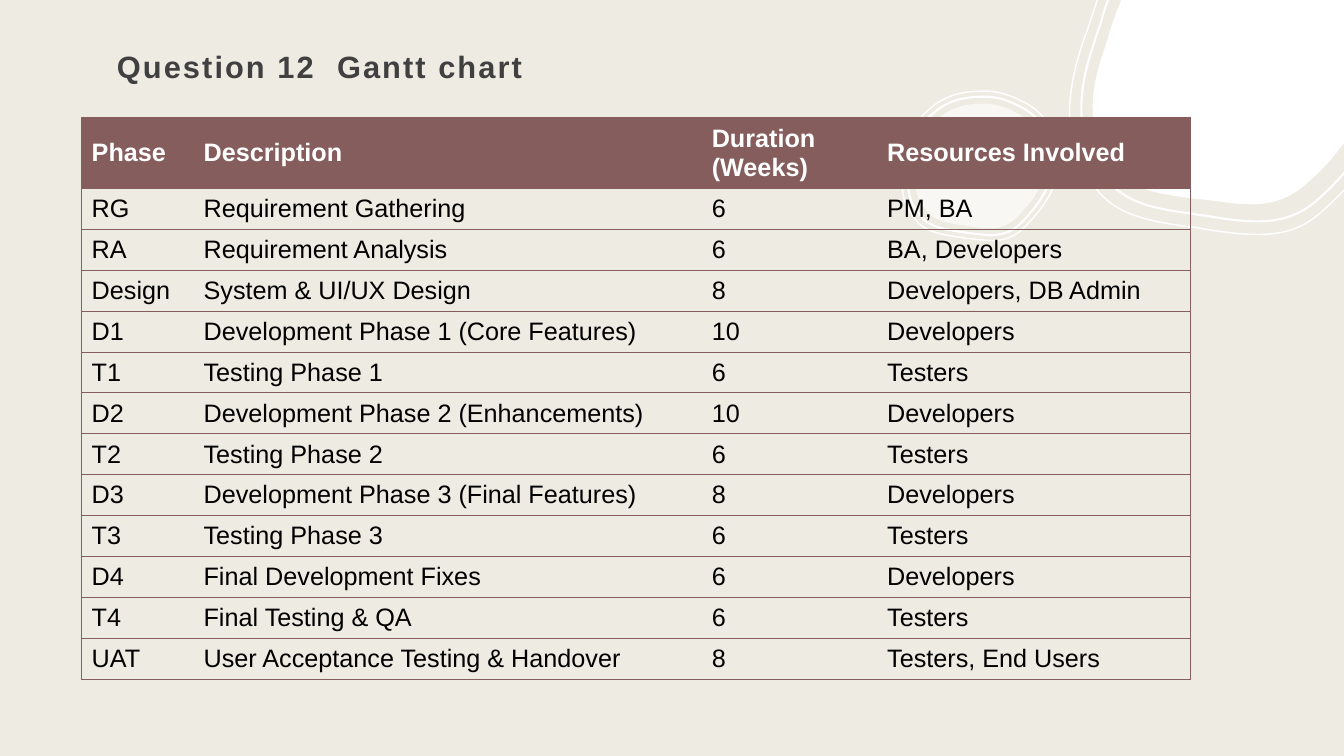
from dataclasses import dataclass
from lxml.etree import SubElement
from pptx import Presentation
from pptx.dml.color import RGBColor as RGB
from pptx.enum.text import MSO_ANCHOR as Anchor
from pptx.oxml.ns import qn
from pptx.util import Inches, Pt

# Content
TITLE = "Question 12  Gantt chart"
HEADINGS = ("Phase", "Description", "Duration (Weeks)", "Resources Involved")
PHASES = [
    ("RG", "Requirement Gathering", "6", "PM, BA"),
    ("RA", "Requirement Analysis", "6", "BA, Developers"),
    ("Design", "System & UI/UX Design", "8", "Developers, DB Admin"),
    ("D1", "Development Phase 1 (Core Features)", "10", "Developers"),
    ("T1", "Testing Phase 1", "6", "Testers"),
    ("D2", "Development Phase 2 (Enhancements)", "10", "Developers"),
    ("T2", "Testing Phase 2", "6", "Testers"),
    ("D3", "Development Phase 3 (Final Features)", "8", "Developers"),
    ("T3", "Testing Phase 3", "6", "Testers"),
    ("D4", "Final Development Fixes", "6", "Developers"),
    ("T4", "Final Testing & QA", "6", "Testers"),
    ("UAT", "User Acceptance Testing & Handover", "8", "Testers, End Users"),
]

# Outlines: a start point, then lines (2 numbers) or curves (6 numbers)
CORNER = [
    (11.12, 0), (13.5, 0), (13.51, .01),
    (13.57, .12, 13.62, .24, 13.64, .36), (13.67, .51, 13.66, .67, 13.62, .84),
    (13.56, 1.05, 13.45, 1.27, 13.29, 1.47), (13.2, 1.59, 13.09, 1.71, 12.96, 1.82),
    (12.83, 1.94, 12.69, 2, 12.53, 2.02), (12.35, 2.04, 12.16, 2.01, 11.95, 1.98),
    (11.91, 1.98, 11.87, 1.97, 11.83, 1.97), (11.47, 1.92, 11.22, 1.88, 11.06, 1.67),
    (10.8, 1.35, 10.77, .99, 10.96, .47), (10.98, .4, 11, .34, 11.02, .27),
    (11.05, .18, 11.08, .1, 11.11, .03),
]
CORNER_INNER_RING = [
    (11.04, -.13), (13.57, -.13), (13.64, -.03),
    (13.72, .09, 13.77, .22, 13.79, .36), (13.83, .53, 13.82, .71, 13.78, .89),
    (13.71, 1.18, 13.55, 1.47, 13.32, 1.73), (13.24, 1.82, 13.16, 1.9, 13.07, 1.98),
    (12.92, 2.11, 12.78, 2.17, 12.59, 2.19), (12.4, 2.21, 12.19, 2.18, 11.96, 2.14),
    (11.92, 2.14, 11.87, 2.13, 11.83, 2.12), (11.43, 2.07, 11.16, 2.01, 10.97, 1.77),
    (10.69, 1.41, 10.65, 1.01, 10.85, .43), (10.87, .36, 10.9, .28, 10.92, .22),
    (10.96, .07, 11, -.03, 11.04, -.12),
]
CORNER_OUTER_RING = [
    (10.93, -.13), (13.72, -.13), (13.75, -.09),
    (13.83, .04, 13.88, .18, 13.91, .33), (13.95, .51, 13.94, .71, 13.89, .91),
    (13.82, 1.22, 13.64, 1.53, 13.4, 1.81), (13.31, 1.91, 13.22, 2, 13.12, 2.09),
    (12.97, 2.23, 12.81, 2.3, 12.61, 2.32), (12.41, 2.34, 12.18, 2.31, 11.93, 2.27),
    (11.88, 2.26, 11.84, 2.25, 11.79, 2.25), (11.37, 2.19, 11.07, 2.13, 10.87, 1.87),
    (10.57, 1.49, 10.53, 1.05, 10.74, .42), (10.77, .34, 10.8, .26, 10.82, .19),
    (10.86, .07, 10.89, -.02, 10.92, -.1),
]
PEBBLE = [
    (9.73, .96), (9.76, .96, 9.78, .96, 9.81, .96),
    (9.91, .97, 10.01, 1, 10.1, 1.05), (10.2, 1.09, 10.27, 1.16, 10.33, 1.23),
    (10.39, 1.31, 10.43, 1.38, 10.44, 1.47), (10.46, 1.55, 10.46, 1.63, 10.44, 1.72),
    (10.4, 1.85, 10.33, 1.99, 10.22, 2.11), (10.19, 2.15, 10.15, 2.19, 10.11, 2.23),
    (10.04, 2.29, 9.97, 2.32, 9.88, 2.33), (9.79, 2.34, 9.69, 2.32, 9.58, 2.31),
    (9.56, 2.3, 9.54, 2.3, 9.52, 2.3), (9.34, 2.27, 9.21, 2.25, 9.12, 2.13),
    (8.99, 1.97, 8.97, 1.78, 9.07, 1.51), (9.08, 1.47, 9.09, 1.44, 9.1, 1.4),
    (9.14, 1.27, 9.16, 1.2, 9.24, 1.14), (9.31, 1.07, 9.4, 1.02, 9.5, .99),
    (9.58, .97, 9.65, .96, 9.73, .96),
]
PEBBLE_CENTRE = (9.73, 1.65)


# Theme
@dataclass(frozen=True)
class Theme:
    paper: str = "EEEBE2"
    white: str = "FFFFFF"
    accent: str = "855D5D"
    heading: str = "404040"
    body: str = "000000"
    font: str = "Arial"
    title_size: float = 22
    table_size: float = 18
    rule: float = 0.75


THEME = Theme()
COLUMNS = (1.11, 5.04, 1.74, 3.11)
TABLE_LEFT, TABLE_TOP, TABLE_HEIGHT = 0.81, 1.17, 5.57
ROW_HEIGHT = Pt(29.2)


def write(frame, text, size=THEME.table_size, color=THEME.body, bold=False, spacing=0):
    frame.word_wrap = True
    run = frame.paragraphs[0].add_run()
    run.text = text
    run.font.name, run.font.size, run.font.bold = THEME.font, Pt(size), bold
    run.font.color.rgb = RGB.from_string(color)
    if spacing:
        run.font._element.set("spc", str(int(spacing * 100)))


def bend(blob, steps):
    """Turn the straight segments of a blob into curves where a step has handles."""
    segments = list(blob._element.iter(qn("a:lnTo")))
    for segment, points in zip(segments, steps):
        if len(points) == 1:
            continue
        segment.tag = qn("a:cubicBezTo")
        end = segment[0]
        for x, y in points[:-1]:
            handle = SubElement(segment, qn("a:pt"), x=str(x - blob.left), y=str(y - blob.top))
            end.addprevious(handle)


def draw_blob(slide, outline, line=None, opacity=100, scale=1):
    cx, cy = PEBBLE_CENTRE
    steps = [[(Inches(cx + (x - cx) * scale), Inches(cy + (y - cy) * scale))
              for x, y in zip(step[::2], step[1::2])] for step in outline]
    builder = slide.shapes.build_freeform(*steps[0][0], scale=1.0)
    builder.add_line_segments([step[-1] for step in steps[1:]], close=True)
    blob = builder.convert_to_shape()
    bend(blob, steps[1:])
    blob.shadow.inherit = False
    if line:
        blob.fill.background()
        blob.line.color.rgb = RGB.from_string(THEME.white)
        blob.line.width = Pt(line)
    else:
        blob.line.fill.background()
        blob.fill.solid()
        blob.fill.fore_color.rgb = RGB.from_string(THEME.white)
        if opacity < 100:
            tint = blob._element.spPr.find(qn("a:solidFill"))[0]
            SubElement(tint, qn("a:alpha"), val=str(opacity * 1000))


def rule_cell(cell, sides):
    """Rule the given sides of a cell and clear the others."""
    properties = cell._tc.get_or_add_tcPr()
    for position, side in enumerate("LRTB"):
        edge = SubElement(properties, qn(f"a:ln{side}"), w=str(Pt(THEME.rule)))
        if side in sides:
            paint = SubElement(edge, qn("a:solidFill"))
            SubElement(paint, qn("a:srgbClr"), val=THEME.accent)
        else:
            SubElement(edge, qn("a:noFill"))
        properties.insert(position, edge)


def add_phase_table(slide):
    rows = [HEADINGS, *PHASES]
    frame = slide.shapes.add_table(
        len(rows), len(COLUMNS), Inches(TABLE_LEFT), Inches(TABLE_TOP),
        Inches(sum(COLUMNS)), ROW_HEIGHT * len(rows))
    table = frame.table
    table.horz_banding = False
    for column, width in zip(table.columns, COLUMNS):
        column.width = Inches(width)
    for r, row in enumerate(rows):
        is_header = r == 0
        for c, text in enumerate(row):
            cell = table.cell(r, c)
            cell.vertical_anchor = Anchor.MIDDLE
            if is_header:
                cell.fill.solid()
                cell.fill.fore_color.rgb = RGB.from_string(THEME.accent)
            else:
                cell.fill.background()
            write(cell.text_frame, text, bold=is_header,
                  color=THEME.white if is_header else THEME.body)
            rule_cell(cell, "TB" + "L" * (c == 0) + "R" * (c == len(COLUMNS) - 1))
    frame.height = Inches(TABLE_HEIGHT)


def main():
    deck = Presentation()
    deck.slide_width, deck.slide_height = Inches(13.33), Inches(7.5)
    slide = deck.slides.add_slide(deck.slide_layouts[6])
    slide.background.fill.solid()
    slide.background.fill.fore_color.rgb = RGB.from_string(THEME.paper)

    # Corner decoration
    draw_blob(slide, CORNER)
    draw_blob(slide, CORNER_INNER_RING, line=1.5)
    draw_blob(slide, CORNER_OUTER_RING, line=1)
    draw_blob(slide, PEBBLE, line=1.5)
    draw_blob(slide, PEBBLE, line=1, scale=1.08)
    draw_blob(slide, PEBBLE, opacity=60, scale=0.9)

    # Title
    title = slide.shapes.add_textbox(
        Inches(1.04), Inches(-0.53), Inches(7.98), Inches(1.47)).text_frame
    title.vertical_anchor = Anchor.BOTTOM
    title.margin_left = title.margin_right = title.margin_top = Inches(0.12)
    title.margin_bottom = Inches(0.1)
    write(title, TITLE, size=THEME.title_size, color=THEME.heading, bold=True, spacing=1.5)

    # Phases
    add_phase_table(slide)
    deck.save("out.pptx")


if __name__ == "__main__":
    main()
